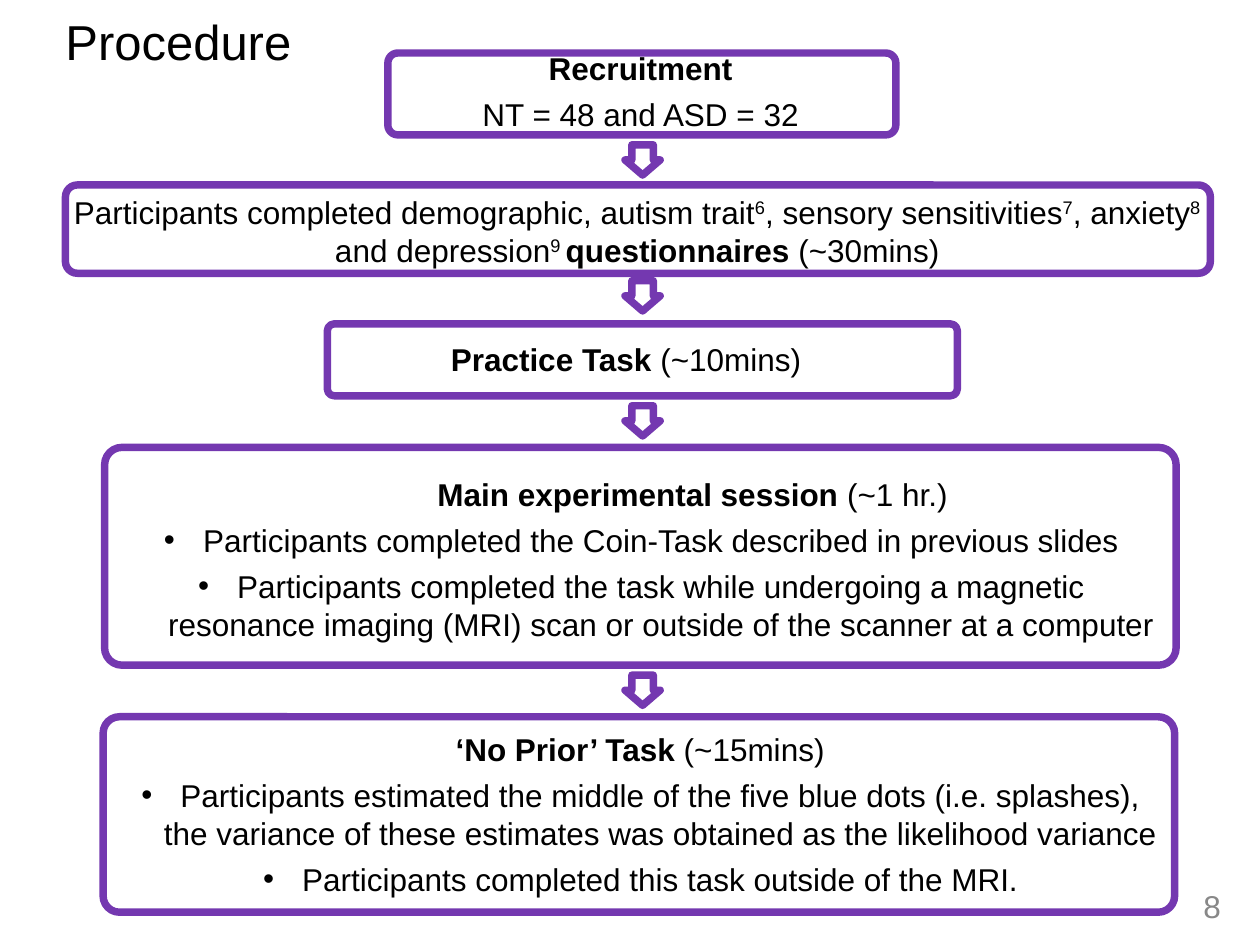
from lxml import etree
from pptx import Presentation
from pptx import util as u
from pptx.dml.color import RGBColor
from pptx.enum import shapes, text
from pptx.oxml.ns import qn

PURPLE, BLACK, GREY = "7438B0", "000000", "888888"
LEFT, CENTER, RIGHT = text.PP_ALIGN.LEFT, text.PP_ALIGN.CENTER, text.PP_ALIGN.RIGHT


def outline(kind, left, top, width, height):
    """Add an unfilled preset shape with the thick purple line."""
    shape = slide.shapes.add_shape(kind, u.Cm(left), u.Cm(top), u.Cm(width), u.Cm(height))
    shape.shadow.inherit = False
    shape.fill.background()
    shape.line.color.rgb = RGBColor.from_string(PURPLE)
    shape.line.width = u.Pt(4.25)
    return shape


def write(shape, paragraphs, insets, size=18, color=BLACK, anchor=text.MSO_ANCHOR.TOP):
    """Fill a shape with (alignment, left margin, bulleted, runs) paragraphs."""
    frame = shape.text_frame
    frame.word_wrap = True
    frame.auto_size = text.MSO_AUTO_SIZE.NONE
    frame.vertical_anchor = anchor
    frame.margin_left = frame.margin_right = u.Cm(insets[0])
    frame.margin_top, frame.margin_bottom = u.Cm(insets[1]), u.Cm(insets[2])
    for index, (alignment, margin, bulleted, runs) in enumerate(paragraphs):
        paragraph = frame.add_paragraph() if index else frame.paragraphs[0]
        paragraph.alignment = alignment
        paragraph.space_before = u.Pt(4.8 if index else 0)
        properties = paragraph._p.get_or_add_pPr()
        properties.set("marL", str(u.Cm(margin)))
        properties.set("indent", str(u.Cm(-0.79 if bulleted else 0)))
        if bulleted:
            etree.SubElement(properties, qn("a:buFont")).set("typeface", "Arial")
            etree.SubElement(properties, qn("a:buChar")).set("char", "•")
        for content, style in runs:
            run = paragraph.add_run()
            run.text = content
            run.font.name = "Arial"
            run.font.size = u.Pt(size)
            run.font.bold = style == "bold"
            run.font.color.rgb = RGBColor.from_string(color)
            if style == "super":
                run._r.get_or_add_rPr().set("baseline", "30000")


presentation = Presentation()
presentation.slide_width, presentation.slide_height = u.Cm(25.4), u.Cm(19.05)
slide = presentation.slides.add_slide(presentation.slide_layouts[5])

title = slide.shapes.title
title.left, title.top, title.width, title.height = u.Cm(1.32), u.Cm(0.23), u.Cm(5.28), u.Cm(1.19)
write(title, [(LEFT, 0, False, [("Procedure", "")])], (0, 0, 0),
      size=28, anchor=text.MSO_ANCHOR.MIDDLE)

# Outlines of the five steps: left, top, width, height, corner radius
steps = [
    (7.82, 1.07, 10.24, 1.65, 0.2),
    (1.32, 3.73, 23.08, 1.78, 0.24),
    (6.6, 6.53, 12.7, 1.45, 0.14),
    (2.11, 9.02, 21.6, 4.39, 0.35),
    (2.08, 14.45, 21.6, 3.94, 0.33),
]
for left, top, width, height, radius in steps:
    box = outline(shapes.MSO_SHAPE.ROUNDED_RECTANGLE, left, top, width, height)
    box.adjustments[0] = radius / height

for top in (2.92, 5.66, 8.18, 13.61):
    arrow = outline(shapes.MSO_SHAPE.DOWN_ARROW, 12.6, top, 0.71, 0.61)
    arrow.adjustments[0], arrow.adjustments[1] = 0.61, 0.5

# Text of the steps: position, insets (sides, top, bottom), paragraphs
flush, padded = (0, 0.2, 0), (0.25, 0.13, 0.13)
labels = [
    ((8.05, 0.79, 9.73, 1.93), flush, [
        (CENTER, 0, False, [("Recruitment", "bold")]),
        (CENTER, 0, False, [("NT = 48 and ASD = 32", "")]),
    ]),
    ((1.07, 3.76, 23.55, 1.55), padded, [
        (CENTER, 0, False, [
            ("Participants completed demographic, autism trait", ""), ("6", "super"),
            (", sensory sensitivities", ""), ("7", "super"),
            (", anxiety", ""), ("8", "super"),
            (" and depression", ""), ("9 ", "super"),
            ("questionnaires ", "bold"), ("(~30mins)", ""),
        ]),
    ]),
    ((8.43, 6.73, 8.38, 1.02), padded, [
        (CENTER, 0, False, [("Practice Task ", "bold"), ("(~10mins)", "")]),
    ]),
    ((2.39, 9.37, 21.03, 3.28), flush, [
        (LEFT, 6.43, False, [("Main experimental session ", "bold"), ("(~1 hr.)", "")]),
        (CENTER, 0.84, True, [
            ("Participants completed the Coin-Task described in previous slides", "")]),
        (CENTER, 0.84, True, [
            ("Participants completed the task while undergoing a magnetic resonance "
             "imaging (MRI) scan or outside of the scanner at a computer", "")]),
    ]),
    ((2.08, 14.58, 21.62, 3.2), padded, [
        (CENTER, 0.03, False, [("‘No Prior’ Task", "bold"), (" (~15mins)", "")]),
        (CENTER, 0.84, True, [
            ("Participants estimated the middle of the five blue dots (i.e. splashes), "
             "the variance of these estimates was obtained as the likelihood variance", "")]),
        (CENTER, 0.84, True, [
            ("Participants completed this task outside of the MRI.", "")]),
    ]),
]
for position, insets, paragraphs in labels:
    label = slide.shapes.add_textbox(*map(u.Cm, position))
    write(label, paragraphs, insets)

page_number = slide.shapes.add_textbox(u.Cm(18.77), u.Cm(17.78), u.Cm(5.84), u.Cm(0.97))
write(page_number, [(RIGHT, 0, False, [("8", "")])], (0, 0, 0),
      color=GREY, anchor=text.MSO_ANCHOR.MIDDLE)

presentation.save("out.pptx")
